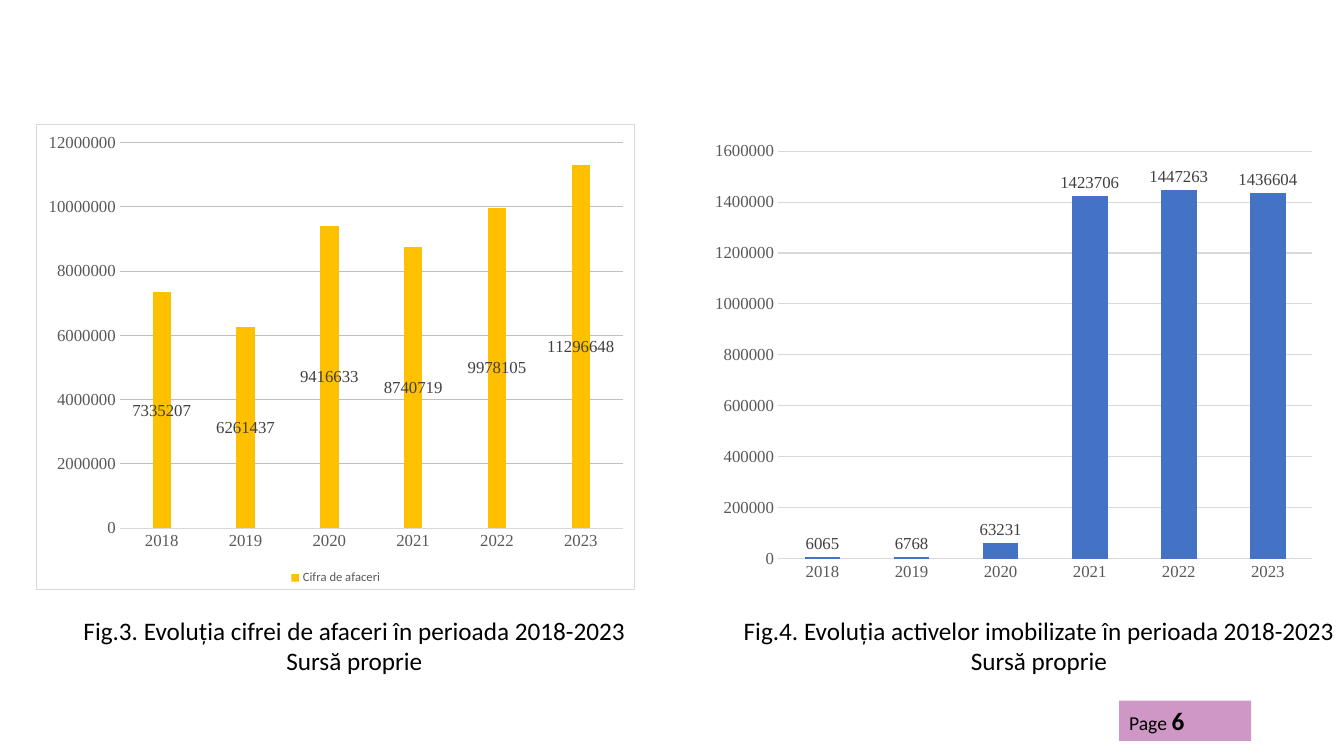
import pptx
import pptx.chart.data
import pptx.dml.color
import pptx.enum.chart
import pptx.enum.shapes
import pptx.enum.text
import pptx.oxml
import pptx.oxml.ns
import pptx.util
from pptx.util import Inches


class Theme:
    sans, serif = "Calibri", "Times New Roman"
    black, label, axis = "000000", "404040", "595959"
    white, pale, grid = "FFFFFF", "D9D9D9", "BFBFBF"
    gold, blue, plum = "FFC000", "4472C4", "9F318D"
    body, page, tick, key = 18, 14, 12, 9
    thin = 0.75


def rgb(code):
    return pptx.dml.color.RGBColor.from_string(code)


class Deck:
    def __init__(self, theme):
        self.theme = theme
        self.file = pptx.Presentation()
        self.file.slide_width = Inches(13.33)
        self.file.slide_height = Inches(7.5)
        self.slide = self.file.slides.add_slide(self.file.slide_layouts[6])

    def style(self, font, size, color, name):
        font.size = pptx.util.Pt(size)
        font.color.rgb = rgb(color)
        font.name = name

    def rule(self, line, color):
        line.color.rgb = rgb(color)
        line.width = pptx.util.Pt(self.theme.thin)

    def badge(self, box, word, number):
        """Add the half-transparent page number tag."""
        t = self.theme
        tag = self.slide.shapes.add_shape(
            pptx.enum.shapes.MSO_SHAPE.RECTANGLE, *map(Inches, box))
        tag.shadow.inherit = False
        tag.line.fill.background()
        tag.fill.solid()
        tag.fill.fore_color.rgb = rgb(t.plum)
        shade = tag.fill._xPr.find(".//" + pptx.oxml.ns.qn("a:srgbClr"))
        shade.append(pptx.oxml.parse_xml(
            f'<a:alpha {pptx.oxml.ns.nsdecls("a")} val="50000"/>'))
        tag.text_frame.vertical_anchor = pptx.enum.text.MSO_ANCHOR.MIDDLE
        para = tag.text_frame.paragraphs[0]
        para.alignment = pptx.enum.text.PP_ALIGN.LEFT
        for text, size, bold in ((word, t.page, False), (number, t.body, True)):
            run = para.add_run()
            run.text = text
            self.style(run.font, size, t.black, t.sans)
            run.font.bold = bold

    def caption(self, box, lines):
        t = self.theme
        frame = self.slide.shapes.add_textbox(*map(Inches, box)).text_frame
        frame.word_wrap = True
        frame.text = "\n".join(lines)
        for para in frame.paragraphs:
            para.alignment = pptx.enum.text.PP_ALIGN.CENTER
            self.style(para.font, t.body, t.black, t.sans)

    def frame(self, chart, framed):
        """Set the chart background: a white panel with a border, or none."""
        t = self.theme
        fill = f'<a:solidFill><a:srgbClr val="{t.white}"/></a:solidFill>'
        edge = f'<a:solidFill><a:srgbClr val="{t.pale}"/></a:solidFill>'
        if not framed:
            fill = edge = "<a:noFill/>"
        root = chart._chartSpace
        root.find(pptx.oxml.ns.qn("c:chart")).addnext(pptx.oxml.parse_xml(
            f'<c:spPr {pptx.oxml.ns.nsdecls("c", "a")}>{fill}'
            f'<a:ln w="{pptx.util.Pt(t.thin)}">{edge}</a:ln></c:spPr>'))

    def columns(self, box, name, years, values, color, grid, top, step,
                gap, overlap, place, framed):
        t = self.theme
        data = pptx.chart.data.CategoryChartData()
        data.categories = years
        data.add_series(name, values)
        chart = self.slide.shapes.add_chart(
            pptx.enum.chart.XL_CHART_TYPE.COLUMN_CLUSTERED,
            *map(Inches, box), data).chart
        self.style(chart.font, t.tick, t.black, t.serif)
        self.frame(chart, framed)
        chart.has_title = False
        chart.has_legend = framed
        if framed:
            chart.legend.position = pptx.enum.chart.XL_LEGEND_POSITION.BOTTOM
            chart.legend.include_in_layout = False
            self.style(chart.legend.font, t.key, t.axis, t.sans)

        for axis in (chart.category_axis, chart.value_axis):
            axis.major_tick_mark = pptx.enum.chart.XL_TICK_MARK.NONE
            axis.minor_tick_mark = pptx.enum.chart.XL_TICK_MARK.NONE
            self.style(axis.tick_labels.font, t.tick, t.axis, t.serif)
        self.rule(chart.category_axis.format.line, t.pale)
        scale = chart.value_axis
        scale.format.line.fill.background()
        scale.minimum_scale, scale.maximum_scale = 0, top
        scale.major_unit = step
        self.rule(scale.major_gridlines.format.line, grid)

        plot = chart.plots[0]
        plot.vary_by_categories = False
        plot.gap_width, plot.overlap = gap, overlap
        bars = plot.series[0]
        bars.format.fill.solid()
        bars.format.fill.fore_color.rgb = rgb(color)
        labels = bars.data_labels
        labels.show_value = True
        labels.position = place
        self.style(labels.font, t.tick, t.label, t.serif)


def main():
    deck = Deck(Theme())
    spot = pptx.enum.chart.XL_LABEL_POSITION
    years = [str(year) for year in range(2018, 2024)]
    deck.badge((11.1, 6.95, 1.31, 0.4), "Page ", "6")
    deck.columns(
        (0.36, 1.23, 5.94, 4.62), "Cifra de afaceri", years,
        (7335207, 6261437, 9416633, 8740719, 9978105, 11296648),
        Theme.gold, Theme.grid, 12000000, 2000000,
        355, -70, spot.CENTER, True)
    deck.columns(
        (6.97, 1.32, 6.17, 4.53), "Active imobilizate", years,
        (6065, 6768, 63231, 1423706, 1447263, 1436604),
        Theme.blue, Theme.pale, 1600000, 200000,
        150, 0, spot.OUTSIDE_END, False)
    for left, title in (
            (0.18, "Fig.3. Evoluția cifrei de afaceri în perioada 2018-2023"),
            (6.97, "Fig.4. Evoluția activelor imobilizate în perioada 2018-2023")):
        deck.caption((left, 6.05, 6.67, 0.71), (title, "Sursă proprie"))
    deck.file.save("out.pptx")


if __name__ == "__main__":
    main()
